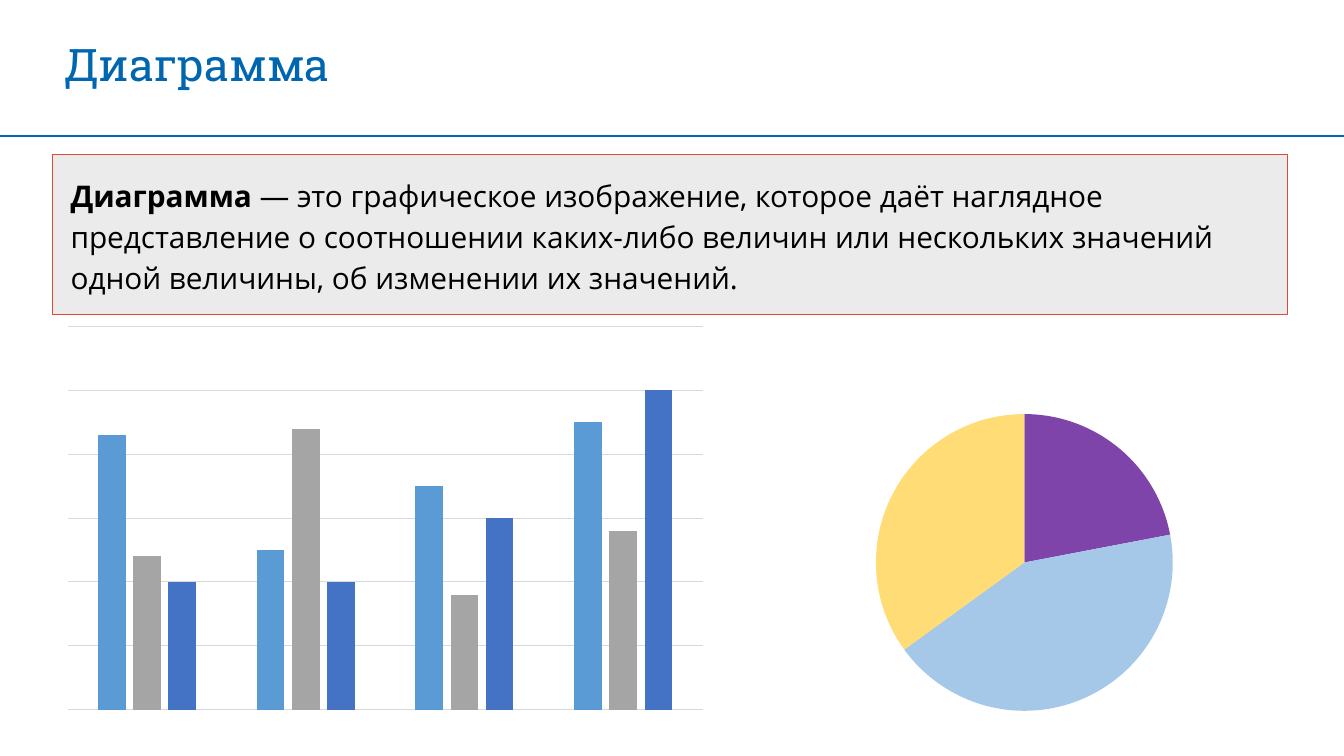
import pptx
import pptx.chart.data
import pptx.dml.color
import pptx.enum.chart
import pptx.enum.shapes
import pptx.enum.text
import pptx.oxml
import pptx.oxml.ns
import pptx.util

Inches = pptx.util.Inches
Pt = pptx.util.Pt

COLORS = {
    "heading": "0066B0",
    "text": "000000",
    "panel": "D9D9D9",
    "panel_border": "DD4935",
    "grid": "D9D9D9",
}
COLUMNS = [
    ("Series 1", [86, 50, 70, 90], "5B9BD5"),
    ("Series 2", [48, 88, 36, 56], "A5A5A5"),
    ("Series 3", [40, 40, 60, 100], "4472C4"),
]
SECTORS = [(22, "7030A0"), (43, "9DC3E6"), (35, "FFD966")]
DEFINITION = [
    [("Диаграмма ", True), ("— это графическое изображение, которое даёт наглядное", False)],
    [("представление о соотношении каких-либо величин или нескольких значений", False)],
    [("одной величины, об изменении их значений.", False)],
]


def rgb(value):
    return pptx.dml.color.RGBColor.from_string(value)


def fill_solid(fill, color, opacity=100):
    fill.solid()
    fill.fore_color.rgb = rgb(color)
    if opacity < 100:
        alpha = pptx.oxml.parse_xml(
            f'<a:alpha {pptx.oxml.ns.nsdecls("a")} val="{opacity * 1000}"/>'
        )
        solid = fill._xPr.find(pptx.oxml.ns.qn("a:solidFill"))
        solid[0].append(alpha)


def add_text(paragraph, text, *, size, font="Open Sans", color=COLORS["text"], bold=False):
    run = paragraph.add_run()
    run.text = text
    run.font.size = Pt(size)
    run.font.name = font
    run.font.bold = bold
    run.font.color.rgb = rgb(color)


def add_heading(slide, left, top, width, height):
    heading = slide.shapes.title
    heading.left, heading.top = Inches(left), Inches(top)
    heading.width, heading.height = Inches(width), Inches(height)
    frame = heading.text_frame
    frame.word_wrap = True
    frame.auto_size = pptx.enum.text.MSO_AUTO_SIZE.NONE
    frame.vertical_anchor = pptx.enum.text.MSO_ANCHOR.TOP
    paragraph = frame.paragraphs[0]
    paragraph.alignment = pptx.enum.text.PP_ALIGN.LEFT
    add_text(paragraph, "Диаграмма", size=32, font="Roboto Slab", color=COLORS["heading"])


def add_divider(slide, left, top, width):
    divider = slide.shapes.add_connector(
        pptx.enum.shapes.MSO_CONNECTOR.STRAIGHT,
        Inches(left), Inches(top), Inches(left + width), Inches(top),
    )
    divider.line.color.rgb = rgb(COLORS["heading"])
    divider.line.width = Pt(1)
    divider._element.spPr.append(
        pptx.oxml.parse_xml(f'<a:effectLst {pptx.oxml.ns.nsdecls("a")}/>')
    )


def add_definition(slide, left, top, width, height):
    panel = slide.shapes.add_shape(
        pptx.enum.shapes.MSO_SHAPE.RECTANGLE,
        Inches(left), Inches(top), Inches(width), Inches(height),
    )
    panel.shadow.inherit = False
    fill_solid(panel.fill, COLORS["panel"], 50)
    panel.line.color.rgb = rgb(COLORS["panel_border"])
    panel.line.width = Pt(1)
    frame = panel.text_frame
    frame.word_wrap = True
    frame.vertical_anchor = pptx.enum.text.MSO_ANCHOR.TOP
    frame.margin_left = frame.margin_right = Inches(0.18)
    frame.margin_top = frame.margin_bottom = Inches(0.18)
    for index, phrases in enumerate(DEFINITION):
        paragraph = frame.add_paragraph() if index else frame.paragraphs[0]
        paragraph.alignment = pptx.enum.text.PP_ALIGN.LEFT
        paragraph.line_spacing = Pt(29.3)
        for text, bold in phrases:
            add_text(paragraph, text, size=21.3, bold=bold)


def add_plain_chart(slide, kind, categories, series, left, top, width, height):
    data = pptx.chart.data.CategoryChartData()
    data.categories = categories
    for name, values in series:
        data.add_series(name, values)
    chart = slide.shapes.add_chart(
        kind, Inches(left), Inches(top), Inches(width), Inches(height), data
    ).chart
    chart.has_title = False
    chart.has_legend = False
    chart.font.size = Pt(10)
    chart.font.name = "Open Sans"
    chart.font.color.rgb = rgb(COLORS["text"])
    return chart


def add_column_chart(slide, left, top, width, height):
    chart = add_plain_chart(
        slide, pptx.enum.chart.XL_CHART_TYPE.COLUMN_CLUSTERED, ["1", "2", "3", "4"],
        [(name, values) for name, values, color in COLUMNS], left, top, width, height,
    )
    chart.category_axis.visible = False
    value_axis = chart.value_axis
    value_axis.visible = False
    value_axis.minimum_scale, value_axis.maximum_scale = 0, 120
    value_axis.major_unit = 20
    value_axis.has_major_gridlines = True
    grid = value_axis.major_gridlines.format.line
    grid.color.rgb = rgb(COLORS["grid"])
    grid.width = Pt(0.75)
    plot = chart.plots[0]
    plot.vary_by_categories = False
    plot.gap_width, plot.overlap = 219, -27
    for columns, (name, values, color) in zip(plot.series, COLUMNS):
        fill_solid(columns.format.fill, color)


def add_pie_chart(slide, left, top, width, height):
    chart = add_plain_chart(
        slide, pptx.enum.chart.XL_CHART_TYPE.PIE, ["1", "2", "3"],
        [("Series 1", [value for value, color in SECTORS])], left, top, width, height,
    )
    plot = chart.plots[0]
    plot.vary_by_categories = True
    for index, (value, color) in enumerate(SECTORS):
        sector = plot.series[0].points[index].format
        fill_solid(sector.fill, color, 90)
        sector.line.fill.background()


def main():
    deck = pptx.Presentation()
    deck.slide_width, deck.slide_height = Inches(13.33), Inches(7.5)
    slide = deck.slides.add_slide(deck.slide_layouts[5])
    add_heading(slide, 0.54, 0.31, 12.27, 0.64)
    add_definition(slide, 0.52, 1.53, 12.25, 1.59)
    add_divider(slide, 0, 1.35, 13.33)
    add_column_chart(slide, 0.54, 3.16, 6.56, 3.96)
    add_pie_chart(slide, 7.51, 3.97, 5.3, 3.22)
    deck.save("out.pptx")


if __name__ == "__main__":
    main()
